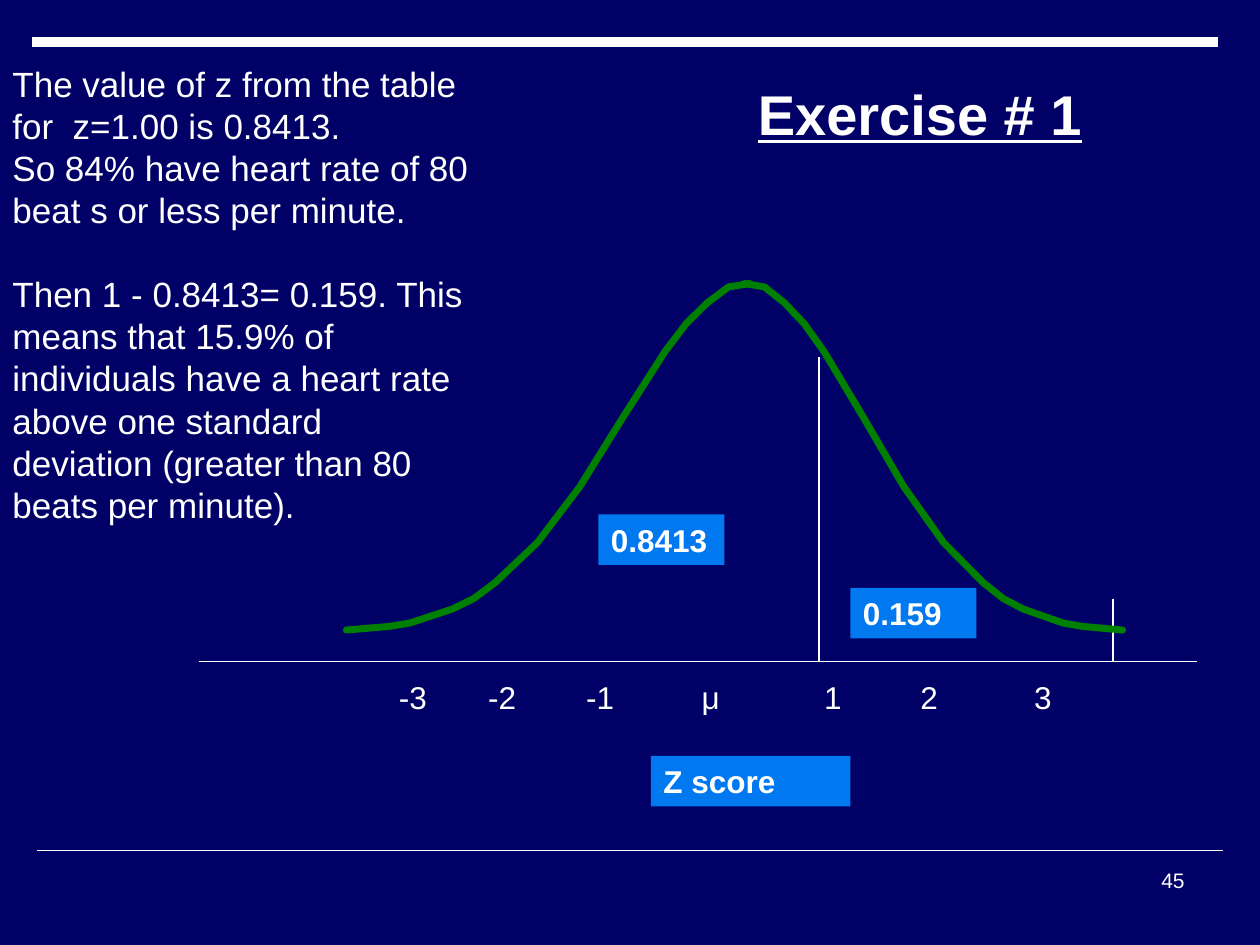
from lxml import etree
from pptx import Presentation
from pptx.dml.color import RGBColor
from pptx.enum.shapes import MSO_CONNECTOR, MSO_SHAPE
from pptx.enum.text import MSO_ANCHOR, PP_ALIGN
from pptx.oxml.ns import qn
from pptx.util import Pt

STRAIGHT = MSO_CONNECTOR.STRAIGHT
RECTANGLE = MSO_SHAPE.RECTANGLE
TOP = MSO_ANCHOR.TOP
LEFT, RIGHT = PP_ALIGN.LEFT, PP_ALIGN.RIGHT
COLORS = {"background": "000066", "text": "FFFFFF", "label": "0078F0", "curve": "008000"}

CURVE_STEPS = [0, 2, 3, 4, 5, 6, 7, 9, 11, 13, 14, 15, 16, 17, 18, 19]
CURVE_HEIGHTS = [360, 358, 356, 352, 348, 342, 333, 310, 278, 239, 220, 201, 185, 173, 164, 162]
CURVE_HALVES = [(198, 428.5), (641.5, 425.5)]

LINES = [
    (21, 486, 699, 486, 1),
    (18, 24, 696, 24, 6),
    (114, 378, 684, 378, 0.75),
    (468, 204, 468, 378, 0.75),
    (636, 342, 636, 378, 0.75),
]
LABELS = [("0.159", 486, 336, 72), ("0.8413", 342, 294, 72), ("Z score", 372, 432, 114)]
EXPLANATION = [
    ("The value of z from the table for  z=1.00 is 0.8413.", 0),
    ("So 84% have heart rate of 80 beat s or less per minute.", 0),
    ("Then 1 - 0.8413= 0.159. This means that 15.9% of individuals have a heart rate "
     "above one standard deviation (greater than 80 beats per minute).", 24),
]
AXIS_SCORES = ["-3", "-2", "-1", "μ", "1", "2", "3"]
AXIS_TABS = [51, 107, 173, 243, 298, 363]


class SlideStyle:
    """Draws the elements of one slide in a shared style."""

    def __init__(self, slide, font="Arial"):
        self.slide = slide
        self.font = font
        fill = slide.background.fill
        fill.solid()
        fill.fore_color.rgb = self.color("background")

    def color(self, name):
        return RGBColor.from_string(COLORS[name])

    def line(self, left, top, right, bottom, width):
        connector = self.slide.shapes.add_connector(
            STRAIGHT, Pt(left), Pt(top), Pt(right), Pt(bottom))
        connector.line.color.rgb = self.color("text")
        connector.line.width = Pt(width)
        etree.SubElement(connector._element.spPr, qn("a:effectLst"))

    def run(self, paragraph, text, size, bold=False, underline=False):
        run = paragraph.add_run()
        run.text = text
        run.font.name = self.font
        run.font.size = Pt(size)
        run.font.bold = bold
        run.font.underline = underline
        run.font.color.rgb = self.color("text")

    def text(self, left, top, width, height, wrap=True):
        shape = self.slide.shapes.add_textbox(Pt(left), Pt(top), Pt(width), Pt(height))
        shape.text_frame.word_wrap = wrap
        return shape.text_frame

    def label(self, text, left, top, width):
        shape = self.slide.shapes.add_shape(RECTANGLE, Pt(left), Pt(top), Pt(width), Pt(28.8))
        shape.shadow.inherit = False
        shape.fill.solid()
        shape.fill.fore_color.rgb = self.color("label")
        shape.line.fill.background()
        shape.text_frame.vertical_anchor = TOP
        paragraph = shape.text_frame.paragraphs[0]
        paragraph.alignment = LEFT
        self.run(paragraph, text, 18, bold=True)

    def bell_curve(self):
        group = self.slide.shapes.add_group_shape()
        for tail, peak in CURVE_HALVES:
            step_width = (peak - tail) / CURVE_STEPS[-1]
            points = [(Pt(tail + step * step_width), Pt(height))
                      for step, height in zip(CURVE_STEPS, CURVE_HEIGHTS)]
            builder = group.shapes.build_freeform(*points[0])
            builder.add_line_segments(points[1:], close=False)
            shape = builder.convert_to_shape()
            shape.shadow.inherit = False
            shape.fill.background()
            shape.line.color.rgb = self.color("curve")
            shape.line.width = Pt(4)
            outline = shape._element.spPr.find(qn("a:ln"))
            outline.set("cap", "rnd")
            etree.SubElement(outline, qn("a:round"))

    def axis_scores(self):
        frame = self.text(216, 384, 504, 28.8)
        frame.margin_left = Pt(12)
        paragraph = frame.paragraphs[0]
        self.run(paragraph, "\t".join(AXIS_SCORES), 18)
        tabs = etree.SubElement(paragraph._p.get_or_add_pPr(), qn("a:tabLst"))
        for position in AXIS_TABS:
            etree.SubElement(tabs, qn("a:tab"), pos=str(Pt(position)), algn="l")


def main():
    presentation = Presentation()
    presentation.slide_width, presentation.slide_height = Pt(720), Pt(540)
    style = SlideStyle(presentation.slides.add_slide(presentation.slide_layouts[6]))
    for line in LINES:
        style.line(*line)

    title = style.text(426, 42, 201, 46, wrap=False)
    style.run(title.paragraphs[0], "Exercise # 1", 32, bold=True, underline=True)

    explanation = style.text(0, 32.4, 276, 273.6)
    for index, (text, gap) in enumerate(EXPLANATION):
        paragraph = explanation.add_paragraph() if index else explanation.paragraphs[0]
        paragraph.line_spacing = Pt(24)
        paragraph.space_before = Pt(gap)
        style.run(paragraph, text, 20)

    for label in LABELS:
        style.label(*label)

    page_number = style.text(516, 492, 168, 36).paragraphs[0]
    page_number.alignment = RIGHT
    style.run(page_number, "45", 12)

    style.bell_curve()
    style.axis_scores()
    presentation.save("out.pptx")


if __name__ == "__main__":
    main()
